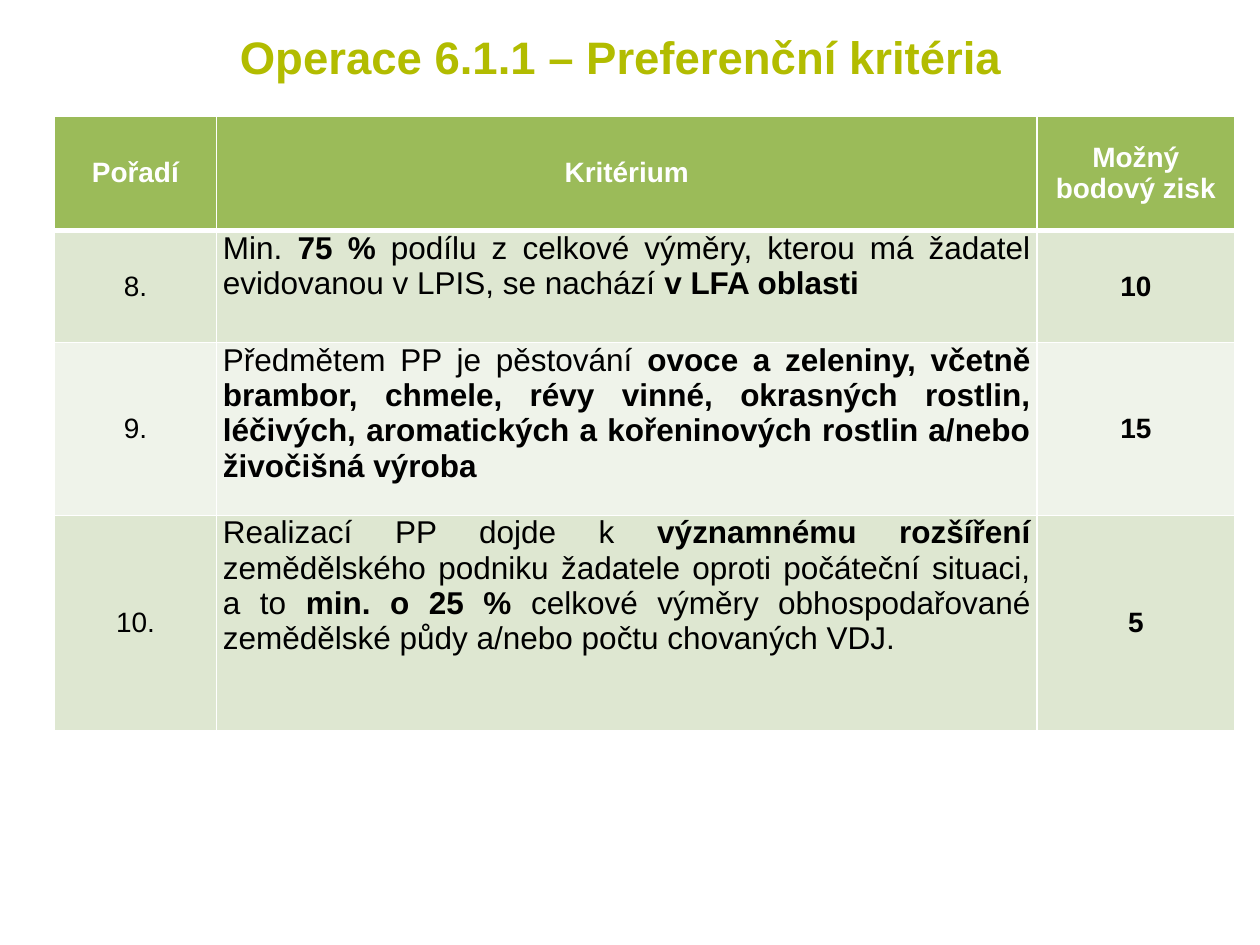
from lxml import etree
from pptx import Presentation
from pptx.dml.color import RGBColor
from pptx.enum.text import MSO_ANCHOR as ANCHOR, PP_ALIGN as ALIGN
from pptx.oxml.ns import qn
from pptx.util import Inches, Pt

COLORS = {
    "title": "B2BC00",
    "header": "9BBB59",
    "band_dark": "DEE7D1",
    "band_light": "EFF3EA",
    "white": "FFFFFF",
    "black": "000000",
}
COLUMN_WIDTHS = [1.29, 6.51, 1.57]
ROW_HEIGHTS = [0.91, 0.89, 1.37, 1.71]
HEADERS = ["Pořadí", "Kritérium", "Možný bodový zisk"]
CRITERIA = [
    ("8.", [
        ("Min. ", False),
        ("75 %", True),
        (" podílu z celkové výměry, kterou má žadatel evidovanou v LPIS, se nachází ", False),
        ("v LFA oblasti", True),
    ], "10"),
    ("9.", [
        ("Předmětem PP je pěstování ", False),
        ("ovoce a zeleniny, včetně brambor, chmele, révy vinné, okrasných rostlin, "
         "léčivých, aromatických a kořeninových rostlin a/nebo živočišná výroba ", True),
    ], "15"),
    ("10.", [
        ("Realizací PP dojde k ", False),
        ("významnému rozšíření", True),
        (" zemědělského podniku žadatele oproti počáteční situaci, a to ", False),
        ("min. o 25 % ", True),
        ("celkové výměry obhospodařované zemědělské půdy a/nebo počtu chovaných VDJ.", False),
    ], "5"),
]


def color(name):
    return RGBColor.from_string(COLORS[name])


def set_attributes(target, values):
    for name, value in values.items():
        setattr(target, name, value)


def write_runs(paragraph, runs, size, color_name, alignment):
    paragraph.alignment = alignment
    for text, bold in runs:
        run = paragraph.add_run()
        run.text = text
        set_attributes(run.font, {"name": "Arial", "size": Pt(size), "bold": bold})
        run.font.color.rgb = color(color_name)


def add_title(slide, text):
    box = slide.shapes.add_textbox(Inches(0.43), Inches(0.13), Inches(9), Inches(0.63))
    set_attributes(box.text_frame, {"word_wrap": True, "vertical_anchor": ANCHOR.MIDDLE})
    write_runs(box.text_frame.paragraphs[0], [(text, True)], 26, "title", ALIGN.CENTER)


def set_borders(cell, top, bottom):
    properties = cell._tc.get_or_add_tcPr()
    for side, width in {"L": 1, "R": 1, "T": top, "B": bottom}.items():
        line = etree.SubElement(properties, qn(f"a:ln{side}"), w=str(Pt(width)))
        fill = etree.SubElement(line, qn("a:solidFill"))
        etree.SubElement(fill, qn("a:srgbClr"), val=COLORS["white"])


def style_cell(cell, fill_name, margins, anchor, top=1, bottom=1):
    horizontal, vertical = (Inches(margin) for margin in margins)
    set_attributes(cell, {
        "margin_left": horizontal, "margin_right": horizontal,
        "margin_top": vertical, "margin_bottom": vertical,
        "vertical_anchor": anchor,
    })
    set_borders(cell, top, bottom)
    cell.fill.solid()
    cell.fill.fore_color.rgb = color(fill_name)


def fill_header(table):
    for column, text in enumerate(HEADERS):
        cell = table.cell(0, column)
        style_cell(cell, "header", (0.1, 0.05), ANCHOR.MIDDLE, bottom=3)
        write_runs(cell.text_frame.paragraphs[0], [(text, True)], 16, "white", ALIGN.CENTER)


def fill_criterion(table, row, order, description, points):
    fill_name = "band_dark" if row % 2 else "band_light"
    contents = [
        ([(order, False)], 16, ALIGN.CENTER, ANCHOR.MIDDLE),
        (description, 18, ALIGN.JUSTIFY, ANCHOR.TOP),
        ([(points, True)], 16, ALIGN.CENTER, ANCHOR.MIDDLE),
    ]
    for column, (runs, size, alignment, anchor) in enumerate(contents):
        cell = table.cell(row, column)
        style_cell(cell, fill_name, (0.05, 0), anchor, top=3 if row == 1 else 1)
        write_runs(cell.text_frame.paragraphs[0], runs, size, "black", alignment)


def add_criteria_table(slide):
    table = slide.shapes.add_table(
        len(ROW_HEIGHTS), len(COLUMN_WIDTHS), Inches(0.43), Inches(0.92),
        Inches(sum(COLUMN_WIDTHS)), Inches(sum(ROW_HEIGHTS))).table
    for column, width in zip(table.columns, COLUMN_WIDTHS):
        column.width = Inches(width)
    for row, height in zip(table.rows, ROW_HEIGHTS):
        row.height = Inches(height)
    fill_header(table)
    for row, criterion in enumerate(CRITERIA, start=1):
        fill_criterion(table, row, *criterion)


def main():
    presentation = Presentation()
    set_attributes(presentation, {"slide_width": Inches(10), "slide_height": Inches(7.5)})
    slide = presentation.slides.add_slide(presentation.slide_layouts[6])
    add_title(slide, "Operace 6.1.1 – Preferenční kritéria")
    add_criteria_table(slide)
    presentation.save("out.pptx")


if __name__ == "__main__":
    main()
